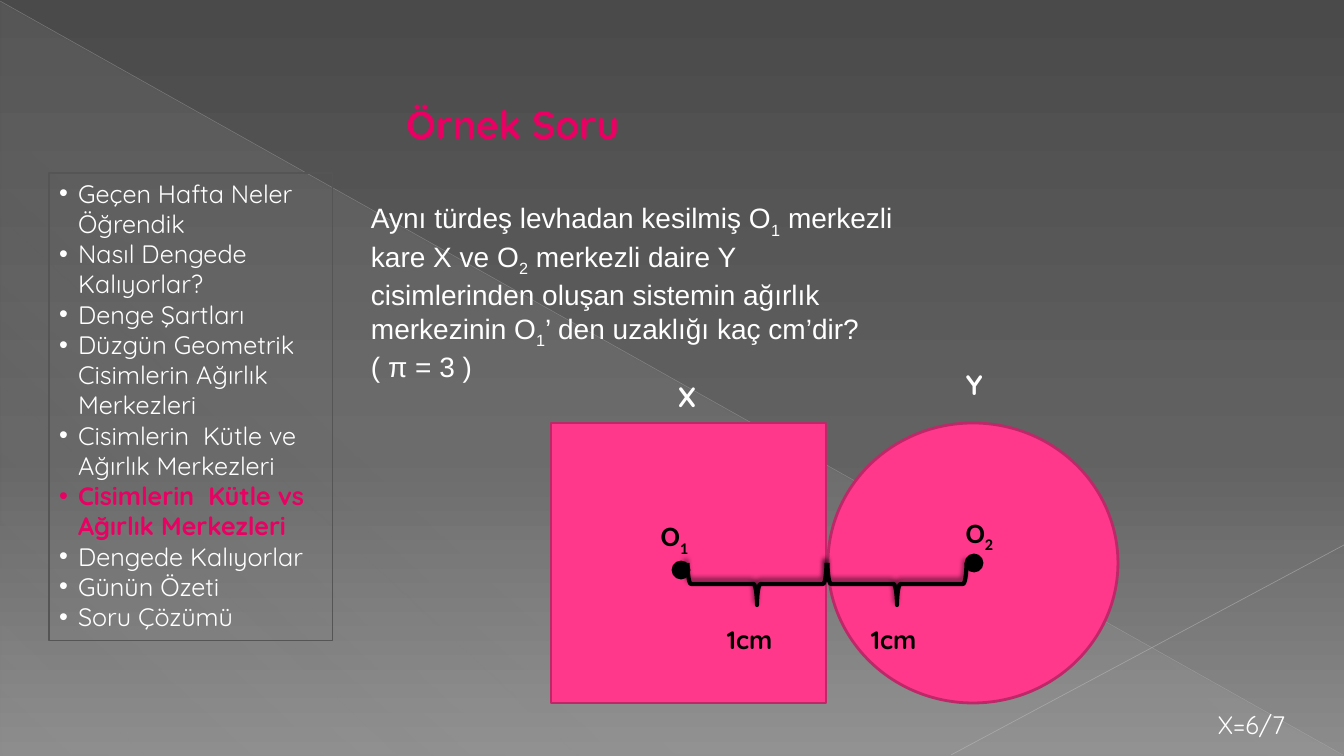
import pptx
import pptx.util
import pptx.dml.color
import pptx.enum.shapes
import pptx.enum.text
import pptx.oxml
import pptx.oxml.ns
from dataclasses import dataclass
from lxml import etree

# Content: in a list of text parts, every second part is a subscript
TITLE = "Örnek Soru"
AGENDA = [
    "Geçen Hafta Neler Öğrendik",
    "Nasıl Dengede Kalıyorlar?",
    "Denge Şartları",
    "Düzgün Geometrik Cisimlerin Ağırlık Merkezleri",
    "Cisimlerin  Kütle ve Ağırlık Merkezleri",
    "Cisimlerin  Kütle vs Ağırlık Merkezleri",
    "Dengede Kalıyorlar",
    "Günün Özeti",
    "Soru Çözümü",
]
CURRENT = 5
QUESTION = [
    ["Aynı türdeş levhadan kesilmiş O", "1", " merkezli kare X ve O", "2",
     " merkezli daire Y cisimlerinden oluşan sistemin ağırlık merkezinin O", "1",
     "’ den uzaklığı kaç cm’dir?"],
    ["( π = 3 )"],
]
ANSWER = "X=6/7"


@dataclass(frozen=True)
class Theme:
    accent: str = "E90062"
    plate: str = "FF388C"
    plate_edge: str = "BD2968"
    frame: str = "555555"
    light: str = "FFFFFF"
    dark: str = "000000"
    display: str = "Quicksand"
    prose: str = "Arial"
    symbol: str = "Calibri"
    title: int = 28
    large: int = 20
    small: int = 18


THEME = Theme()
BACKGROUND = [(0, "4A4A4A", 100), (60, "626262", 100), (100, "8C8C8C", 100)]
SHEEN = [(0, "D2D2D2", 10), (70, "D2D2D2", 8), (100, "D2D2D2", 1)]
RAYS = [((0, 1), (1343, 755), "BFBFBF", 0.39, 35),
        ((1344, 545), (951, 755), "C6C6C6", 0.47, 45)]

# Places in px: left, top, width, height
WIDTH, HEIGHT = 1344, 756
SCALE = 914400 / 100.8
TITLE_AT = (396, 95, 543, 57)
AGENDA_AT = (49, 173, 284, 468)
QUESTION_AT = (361, 196, 555, 179)
SQUARE_AT = (551, 423, 275, 280)
CIRCLE_AT = (828, 423, 290, 280)
DOTS = [(681, 570), (974, 563)]
DOT = 16
BRACE_WIDTH, BRACE_LENGTH = 42, 139
BRACE_CENTRES = [(757, 584), (897, 584)]
LABELS = [  # text parts, place, font, size, colour, bold
    (["X"], (668, 375, 55, 44), THEME.display, THEME.large, THEME.light, True),
    (["Y"], (956, 363, 63, 44), THEME.display, THEME.large, THEME.light, True),
    (["O", "1"], (651, 514, 120, 44), THEME.symbol, THEME.large, THEME.dark, True),
    (["O", "2"], (956, 511, 120, 44), THEME.symbol, THEME.large, THEME.dark, True),
    (["1cm"], (717, 619, 90, 40), THEME.display, THEME.small, THEME.dark, True),
    (["1cm"], (861, 619, 90, 40), THEME.display, THEME.small, THEME.dark, True),
    ([ANSWER], (1208, 704, 136, 40), THEME.display, THEME.small, THEME.light, False),
]

qn = pptx.oxml.ns.qn
PRESETS = pptx.enum.shapes.MSO_SHAPE


def px(value):
    return round(value * SCALE)


def rgb(code):
    return pptx.dml.color.RGBColor.from_string(code)


def add_color(parent, code, opacity):
    color = etree.SubElement(parent, qn("a:srgbClr"), val=code)
    etree.SubElement(color, qn("a:alpha"), val=str(opacity * 1000))


def paint_gradient(fill, holder, stops, angle):
    fill.gradient()
    gradient = next(holder.iter(qn("a:gradFill")))
    for child in list(gradient):
        gradient.remove(child)
    stop_list = etree.SubElement(gradient, qn("a:gsLst"))
    for position, code, opacity in stops:
        add_color(etree.SubElement(stop_list, qn("a:gs"), pos=str(position * 1000)), code, opacity)
    etree.SubElement(gradient, qn("a:lin"), ang=str(angle * 60000), scaled="0")


def add_plain_shape(page, preset, place, fill=None, line=None, weight=2):
    shape = page.shapes.add_shape(preset, *map(px, place))
    shape.shadow.inherit = False
    if fill:
        shape.fill.solid()
        shape.fill.fore_color.rgb = rgb(fill)
    else:
        shape.fill.background()
    if line:
        shape.line.color.rgb = rgb(line)
        shape.line.width = pptx.util.Pt(weight)
    else:
        shape.line.fill.background()
    return shape


def add_ray(page, start, end, code, weight, opacity):
    ray = page.shapes.add_connector(
        pptx.enum.shapes.MSO_CONNECTOR.STRAIGHT, *map(px, start + end))
    ray.line.color.rgb = rgb(code)
    ray.line.width = pptx.util.Pt(weight)
    properties = ray._element.spPr
    color = next(properties.iter(qn("a:srgbClr")))
    etree.SubElement(color, qn("a:alpha"), val=str(opacity * 1000))
    etree.SubElement(properties, qn("a:effectLst"))


def add_brace(page, centre_x, centre_y):
    place = (centre_x - BRACE_WIDTH / 2, centre_y - BRACE_LENGTH / 2, BRACE_WIDTH, BRACE_LENGTH)
    brace = add_plain_shape(page, PRESETS.RIGHT_BRACE, place, line=THEME.dark, weight=3)
    brace.rotation = 90
    effects = brace._element.spPr.find(qn("a:effectLst"))
    shadow = etree.SubElement(
        effects, qn("a:outerShdw"), blurRad=str(pptx.util.Pt(4)),
        dist=str(pptx.util.Pt(3)), dir=str(245 * 60000), rotWithShape="0")
    add_color(shadow, THEME.dark, 60)


def write_text(box, paragraphs, font, size, color, bold=False):
    frame = box.text_frame
    frame.word_wrap = True
    frame.auto_size = pptx.enum.text.MSO_AUTO_SIZE.NONE
    frame.vertical_anchor = pptx.enum.text.MSO_ANCHOR.TOP
    for index, parts in enumerate(paragraphs):
        para = frame.add_paragraph() if index else frame.paragraphs[0]
        para.alignment = pptx.enum.text.PP_ALIGN.LEFT
        para.space_before = pptx.util.Pt(0)
        for order, text in enumerate(parts):
            span = para.add_run()
            span.text = text
            span.font.name = font
            span.font.size = pptx.util.Pt(size)
            span.font.bold = bold
            span.font.color.rgb = rgb(color)
            if order % 2:
                span.font._element.set("baseline", "-25000")


def move(box, place):
    box.left, box.top, box.width, box.height = map(px, place)


def main():
    deck = pptx.Presentation()
    deck.slide_width, deck.slide_height = px(WIDTH), px(HEIGHT)
    page = deck.slides.add_slide(deck.slide_layouts[1])
    title, agenda = page.placeholders

    # Backdrop
    paint_gradient(page.background.fill, page._element, BACKGROUND, 90)
    sheen = add_plain_shape(page, PRESETS.RIGHT_TRIANGLE, (1, 2, WIDTH - 2, HEIGHT - 2))
    paint_gradient(sheen.fill, sheen._element, SHEEN, 133)
    for ray in RAYS:
        add_ray(page, *ray)

    # Title and agenda, stacked above the backdrop
    for box in (title, agenda):
        page.shapes._spTree.append(box._element)
    move(title, TITLE_AT)
    write_text(title, [[TITLE]], THEME.display, THEME.title, THEME.accent, True)
    move(agenda, AGENDA_AT)
    agenda.line.color.rgb = rgb(THEME.frame)
    agenda.line.width = pptx.util.Pt(0.75)
    write_text(agenda, [[item] for item in AGENDA], THEME.display, THEME.small, THEME.light)
    for para in agenda.text_frame.paragraphs:
        properties = para._element.get_or_add_pPr()
        properties.set("marL", str(px(19)))
        properties.set("indent", str(px(-19)))
        etree.SubElement(properties, qn("a:buFont"), typeface=THEME.prose)
        etree.SubElement(properties, qn("a:buChar"), char="•")
    current = agenda.text_frame.paragraphs[CURRENT].runs[0]
    current.font.bold = True
    current.font.color.rgb = rgb(THEME.accent)

    # Question
    question = page.shapes.add_textbox(*map(px, QUESTION_AT))
    write_text(question, QUESTION, THEME.prose, THEME.large, THEME.light)

    # Plates, centres and distances
    add_plain_shape(page, PRESETS.OVAL, CIRCLE_AT, THEME.plate, THEME.plate_edge)
    add_plain_shape(page, PRESETS.RECTANGLE, SQUARE_AT, THEME.plate, THEME.plate_edge)
    for centre in BRACE_CENTRES:
        add_brace(page, *centre)
    for x, y in DOTS:
        add_plain_shape(page, PRESETS.OVAL, (x - DOT / 2, y - DOT / 2, DOT, DOT), THEME.dark, THEME.dark)
    for parts, place, *style in LABELS:
        label = page.shapes.add_textbox(*map(px, place))
        write_text(label, [parts], *style)

    deck.save("out.pptx")


if __name__ == "__main__":
    main()
